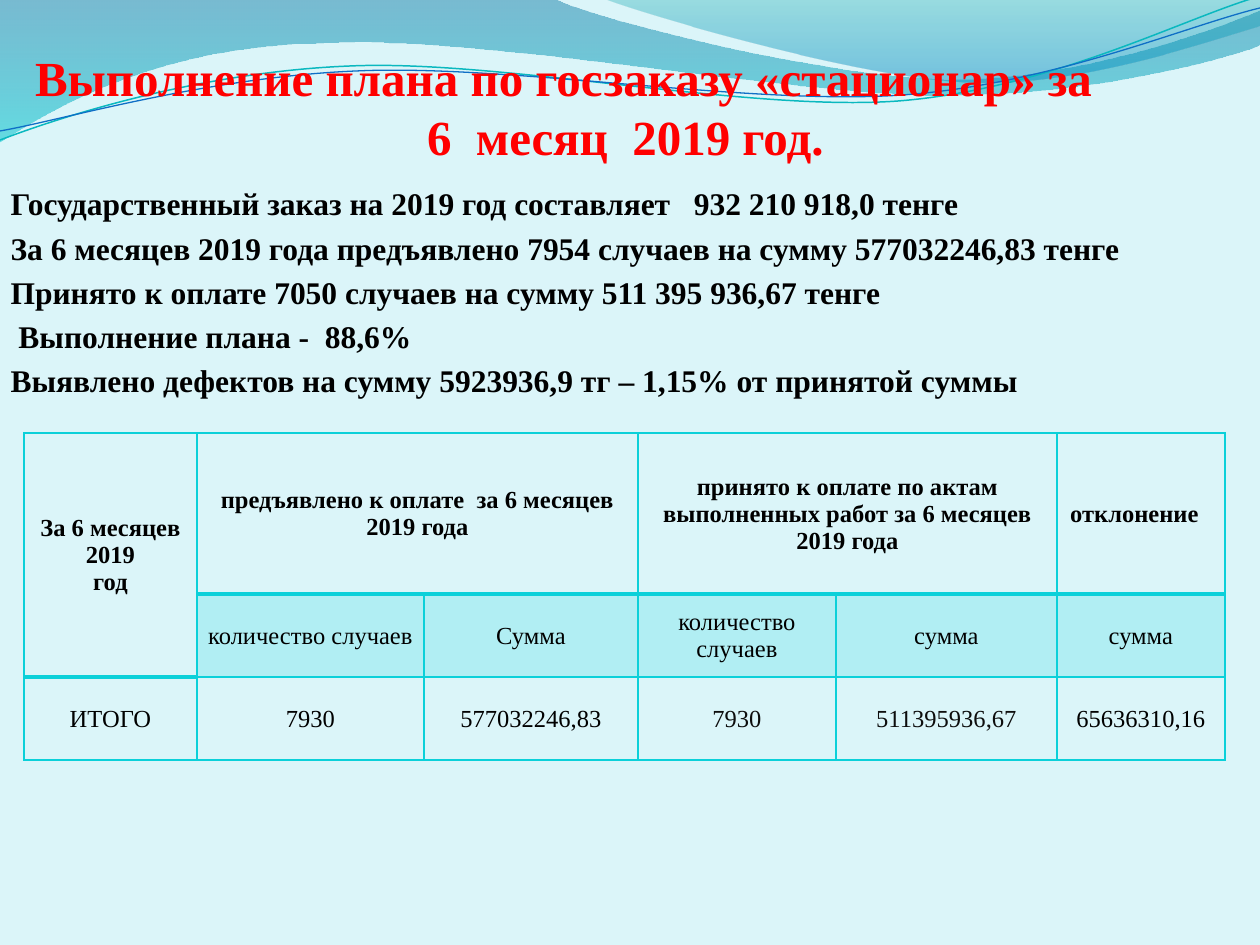
from lxml import etree
from pptx import Presentation, util as u
from pptx.dml import color
from pptx.enum import text
from pptx.oxml import ns

SCALE = 914400 / 126
FONT = "Times New Roman"
CYAN = "0BD0D9"

WAVES = [
    ([(0, 0), (554, -1), (600, 21, 837, 79, 955, 79), (1075, 79, 1207, 33, 1260, 11),
      (1261, 45), (1239, 55, 1096, 96, 940, 95), (784, 95, 481, 35, 324, 43),
      (163, 45, 58, 105, -1, 142)],
     [(0, "0074A1", 45), (1, "00C6CF", 55)]),
    ([(604, -1), (641, 14, 859, 78, 969, 82), (1079, 87, 1211, 40, 1260, 26), (1260, 0)],
     [(0, "00A1A9", 30), (0.8, "008BBF", 45)]),
]
STRANDS = [
    ([(0, 140), (60, 117, 199, 72, 349, 66), (498, 59, 747, 112, 898, 101),
      (1050, 89, 1182, 19, 1257, -3)], "0AB8BF", 0.85),
    ([(0, 131), (59, 121, 207, 77, 357, 71), (508, 64, 752, 106, 903, 95),
      (1053, 84, 1186, 26, 1260, 8)], "0F6FC6", 0.75),
]
TITLE = "Выполнение плана по госзаказу «стационар» за\v6  месяц  2019 год."
BODY = [
    "Государственный заказ на 2019 год составляет   932 210 918,0 тенге",
    "За 6 месяцев 2019 года предъявлено 7954 случаев на сумму 577032246,83 тенге",
    "Принято к оплате 7050 случаев на сумму 511 395 936,67 тенге",
    " Выполнение плана -  88,6%",
    "Выявлено дефектов на сумму 5923936,9 тг – 1,15% от принятой суммы",
]
COLS = [173, 227, 214, 198, 221, 168]
ROWS = [161, 83, 83]
CELLS = [
    ["За 6 месяцев\n2019\nгод", "предъявлено к оплате  за 6 месяцев\n2019 года", "",
     "принято к оплате по актам выполненных работ за 6 месяцев 2019 года", "", "отклонение"],
    ["", "количество случаев", "Сумма", "количество случаев", "сумма", "сумма"],
    ["ИТОГО", "7930", "577032246,83", "7930", "511395936,67", "65636310,16"],
]
MERGES = [((0, 0), (1, 0)), ((0, 1), (0, 2)), ((0, 3), (0, 4))]


def px(n):
    return u.Emu(round(n * SCALE))


def rgb(value):
    return color.RGBColor.from_string(value)


def style(p, size, value, bold):
    for r in p.runs:
        r.font.name, r.font.size, r.font.bold = FONT, u.Pt(size), bold
        r.font.color.rgb = rgb(value)


def indent(p, left, first):
    pPr = p._p.get_or_add_pPr()
    pPr.set("marL", str(px(left)))
    pPr.set("indent", str(px(first)))
    return pPr


def place(sp, box):
    sp.left, sp.top, sp.width, sp.height = map(px, box)


def add_outline(s, steps, x, y, close):
    pts = [(px(x + step[k]), px(y + step[k + 1]))
           for step in steps for k in range(0, len(step), 2)]
    builder = s.shapes.build_freeform(*pts[0])
    builder.add_line_segments(pts[1:], close=close)
    sp = builder.convert_to_shape()
    sp.shadow.inherit = False
    segments = list(sp._element.spPr.iter(ns.qn("a:lnTo")))
    for step in steps[1:]:
        first = segments.pop(0)
        if len(step) == 6:
            first.addprevious(curve := etree.Element(ns.qn("a:cubicBezTo")))
            for segment in [first, segments.pop(0), segments.pop(0)]:
                curve.append(segment[0])
                segment.getparent().remove(segment)
    return sp


def add_waves(s, x, y):
    for steps, stops in WAVES:
        sp = add_outline(s, steps, x, y, True)
        sp.line.fill.background()
        sp.fill.gradient()
        sp.fill.gradient_angle = 270
        for stop, (position, value, _) in zip(sp.fill.gradient_stops, stops):
            stop.position = position
            stop.color.rgb = rgb(value)
        colours = sp._element.spPr.iter(ns.qn("a:srgbClr"))
        for clr, (_, _, alpha) in zip(list(colours), stops):
            etree.SubElement(clr, ns.qn("a:alpha"), val=str(alpha * 1000))
    for steps, value, width in STRANDS:
        sp = add_outline(s, steps, x, y, False)
        sp.fill.background()
        sp.line.color.rgb = rgb(value)
        sp.line.width = u.Pt(width)


def add_title(s, box):
    sp = s.shapes.title
    place(sp, box)
    s.shapes._spTree.append(sp._element)
    tf = sp.text_frame
    tf.text = TITLE
    tf.auto_size = text.MSO_AUTO_SIZE.NONE
    tf.vertical_anchor = text.MSO_ANCHOR.BOTTOM
    tf.margin_left = tf.margin_right = tf.margin_bottom = 0
    p = tf.paragraphs[0]
    p.alignment = text.PP_ALIGN.LEFT
    indent(p, 402, -392)
    style(p, 28, "FF0000", True)


def add_body(s, box):
    sp = s.placeholders[1]
    place(sp, box)
    s.shapes._spTree.append(sp._element)
    tf = sp.text_frame
    tf.text = "\n".join(BODY)
    tf.auto_size = text.MSO_AUTO_SIZE.NONE
    for p in tf.paragraphs:
        p.space_before = u.Pt(3.7)
        etree.SubElement(indent(p, 37, 0), ns.qn("a:buNone"))
        style(p, 18, "000000", True)


def add_border(cell, side, width):
    ln = etree.SubElement(cell._tc.get_or_add_tcPr(), ns.qn("a:ln" + side),
                          w=str(u.Pt(width)))
    fill = etree.SubElement(ln, ns.qn("a:solidFill"))
    etree.SubElement(fill, ns.qn("a:srgbClr"), val=CYAN)


def format_cell(cell, row, col):
    header_end = 1 if col == 0 else 0
    cell.vertical_anchor = text.MSO_ANCHOR.MIDDLE
    cell.margin_left = cell.margin_right = cell.margin_top = px(1)
    cell.margin_bottom = 0
    for side in "LRTB":
        thick = (side, row) in (("B", header_end), ("T", header_end + 1))
        add_border(cell, side, 2 if thick else 1)
    if row == 1 and col > 0:
        cell.fill.solid()
        cell.fill.fore_color.rgb = rgb("B1EEF3")
    else:
        cell.fill.background()
    for p in cell.text_frame.paragraphs:
        p.alignment = text.PP_ALIGN.CENTER
        style(p, 14, "0D0D0D" if row == 2 and col in (3, 4) else "000000", row == 0)


def add_totals(s, x, y):
    frame = s.shapes.add_table(len(ROWS), len(COLS), px(x), px(y),
                               px(sum(COLS)), px(sum(ROWS)))
    table = frame.table
    for column, width in zip(table.columns, COLS):
        column.width = px(width)
    for row, height in zip(table.rows, ROWS):
        row.height = px(height)
    for i, values in enumerate(CELLS):
        for j, value in enumerate(values):
            cell = table.cell(i, j)
            if value:
                cell.text = value
            format_cell(cell, i, j)
    table.cell(0, len(COLS) - 1).margin_right = px(14)
    for start, end in MERGES:
        table.cell(*start).merge(table.cell(*end))


def main():
    prs = Presentation()
    prs.slide_width, prs.slide_height = px(1260), px(945)
    s = prs.slides.add_slide(prs.slide_layouts[1])
    s.background.fill.solid()
    s.background.fill.fore_color.rgb = rgb("DBF5F9")
    add_waves(s, 0, 0)
    add_title(s, (25, 47, 1201, 118))
    add_body(s, (-39, 178, 1191, 689))
    add_totals(s, 24, 433)
    prs.save("out.pptx")


if __name__ == "__main__":
    main()
